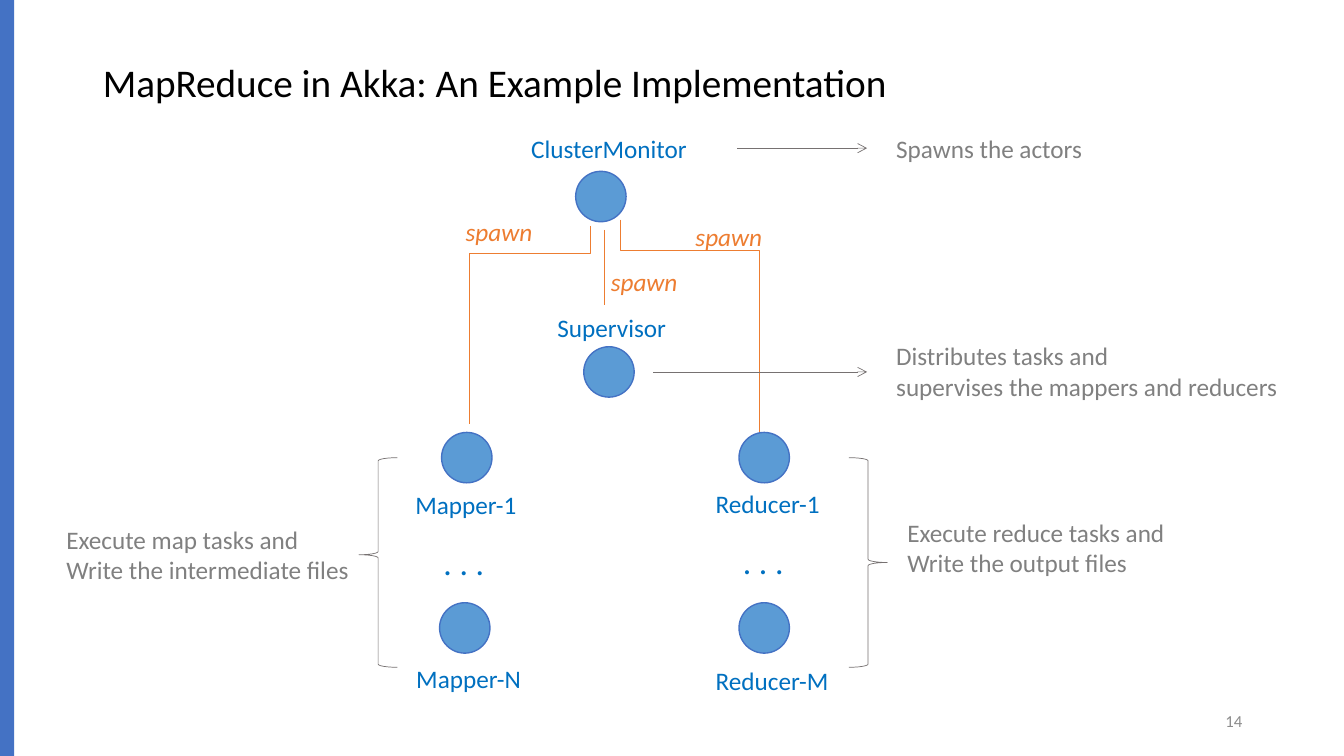
"""Build the slide on the actors of a MapReduce implementation in Akka."""
from dataclasses import dataclass

from lxml.etree import SubElement
from pptx import Presentation
from pptx.dml.color import RGBColor
from pptx.enum.shapes import MSO_CONNECTOR, MSO_SHAPE
from pptx.enum.text import MSO_ANCHOR, MSO_AUTO_SIZE, PP_ALIGN
from pptx.oxml.ns import qn
from pptx.shapes.autoshape import Shape
from pptx.shapes.connector import Connector
from pptx.slide import Slide
from pptx.text.text import TextFrame
from pptx.util import Inches, Pt

COLOURS = {
    "bar": "4472C4",
    "actor": "5B9BD5",
    "title": "000000",
    "name": "0070C0",
    "spawn": "ED7D31",
    "note": "808080",
    "pointer": "767171",
    "number": "8C8C8C",
}
ACTOR_SIZE = 0.5
BRACE_TOP, BRACE_WIDTH, BRACE_HEIGHT = 4.54, 0.38, 2.08


@dataclass(frozen=True)
class Label:
    """A text with its place, size and look."""

    text: str
    left: float
    top: float
    width: float
    height: float = 0.4
    colour: str = "name"
    size: int = 18
    italic: bool = False


@dataclass(frozen=True)
class Line:
    """A line between two points, with an arrowhead or a bend if wanted."""

    start: tuple[float, float]
    end: tuple[float, float]
    colour: str
    arrow: bool = False
    bend: float = 0


@dataclass(frozen=True)
class Brace:
    """A brace around a group of actors."""

    left: float
    rotation: int
    point: float


TITLE = Label("MapReduce in Akka: An Example Implementation",
              0.92, 0.4, 11.5, 0.89, "title", 28)
NUMBER = Label("14", 9.42, 6.95, 3, 0.4, "number", 12)
LABELS = [
    Label("ClusterMonitor", 5.17, 1.27, 1.76),
    Label("Supervisor", 5.43, 3.05, 1.29),
    Label("Mapper-1", 4.02, 4.81, 1.22),
    Label("Mapper-N", 4.03, 6.53, 1.25),
    Label("Reducer-1", 7, 4.8, 1.25),
    Label("Reducer-M", 7, 6.55, 1.33),
    Label(". . .", 4.3, 5.33, 0.76, 0.5, size=24),
    Label(". . .", 7.27, 5.32, 0.76, 0.5, size=24),
    Label("spawn", 4.52, 2.1, 0.87, colour="spawn", italic=True),
    Label("spawn", 6.8, 2.15, 0.87, colour="spawn", italic=True),
    Label("spawn", 5.96, 2.59, 0.87, colour="spawn", italic=True),
    Label("Spawns the actors", 8.79, 1.27, 2.12, colour="note"),
    Label("Distributes tasks and\nsupervises the mappers and reducers",
          8.79, 3.33, 4.03, 0.71, "note"),
    Label("Execute reduce tasks and\nWrite the output files",
          8.9, 5.08, 2.81, 0.71, "note"),
    Label("Execute map tasks and\nWrite the intermediate files",
          0.56, 5.15, 3, 0.71, "note"),
]
ACTORS = [(5.71, 1.7), (5.79, 3.44), (4.38, 4.29), (4.36, 5.98),
          (7.33, 4.29), (7.33, 5.98)]
LINES = [
    Line((5.86, 2.24), (4.66, 4.21), "spawn", bend=0.138),
    Line((5.99, 2.28), (5.99, 3.03), "spawn"),
    Line((6.15, 2.18), (7.53, 4.29), "spawn", bend=0.146),
    Line((7.31, 1.47), (8.6, 1.47), "pointer", arrow=True),
    Line((6.48, 3.69), (8.6, 3.69), "pointer", arrow=True),
]
BRACES = [Brace(3.56, 180, 0.537), Brace(8.42, 0, 0.5)]


def colour_of(name: str) -> RGBColor:
    """Return the named colour."""
    return RGBColor.from_string(COLOURS[name])


def write_text(frame: TextFrame, label: Label) -> None:
    """Write the label, one paragraph a line."""
    frame.text = label.text
    formats = {"name": "Calibri", "size": Pt(label.size),
               "bold": False, "italic": label.italic}
    for para in frame.paragraphs:
        for span in para.runs:
            for key, value in formats.items():
                setattr(span.font, key, value)
            span.font.color.rgb = colour_of(label.colour)


def place_title(page: Slide) -> None:
    """Move and format the title placeholder."""
    box = page.shapes.title
    for side in ("left", "top", "width", "height"):
        setattr(box, side, Inches(getattr(TITLE, side)))
    write_text(box.text_frame, TITLE)
    box.text_frame.vertical_anchor = MSO_ANCHOR.MIDDLE
    for key, value in {"alignment": PP_ALIGN.LEFT, "line_spacing": 0.9}.items():
        setattr(box.text_frame.paragraphs[0], key, value)


def add_label(page: Slide, label: Label) -> TextFrame:
    """Add a text box that fits its text."""
    box = page.shapes.add_textbox(Inches(label.left), Inches(label.top),
                                  Inches(label.width), Inches(label.height))
    write_text(box.text_frame, label)
    for key, value in {"word_wrap": False,
                       "auto_size": MSO_AUTO_SIZE.SHAPE_TO_FIT_TEXT}.items():
        setattr(box.text_frame, key, value)
    return box.text_frame


def add_number(page: Slide) -> None:
    """Add the page number at the right of its box."""
    frame = add_label(page, NUMBER)
    for key, value in {"word_wrap": True, "auto_size": MSO_AUTO_SIZE.NONE,
                       "vertical_anchor": MSO_ANCHOR.MIDDLE}.items():
        setattr(frame, key, value)
    frame.paragraphs[0].alignment = PP_ALIGN.RIGHT


def add_figure(page: Slide, kind: MSO_SHAPE, left: float, top: float,
               width: float, height: float, fill: str = "",
               line: str = "", weight: float = 1) -> Shape:
    """Add a preset shape with the named fill and line colours."""
    shape = page.shapes.add_shape(kind, Inches(left), Inches(top),
                                  Inches(width), Inches(height))
    shape.shadow.inherit = False
    if fill:
        shape.fill.solid()
        shape.fill.fore_color.rgb = colour_of(fill)
    else:
        shape.fill.background()
    if line:
        shape.line.color.rgb = colour_of(line)
        shape.line.width = Pt(weight)
    else:
        shape.line.fill.background()
    return shape


def add_elbow(page: Slide, line: Line) -> Connector:
    """Add a connector that leaves downwards, turned a quarter to either side."""
    (x1, y1), (x2, y2) = line.start, line.end
    side = 1 if x2 < x1 else -1
    middle_x, middle_y = (x1 + x2) / 2, (y1 + y2) / 2
    reach, rise = side * (y2 - y1) / 2, abs(x2 - x1) / 2
    elbow = page.shapes.add_connector(
        MSO_CONNECTOR.ELBOW,
        Inches(middle_x - reach), Inches(middle_y - rise),
        Inches(middle_x + reach), Inches(middle_y + rise))
    properties = elbow._element.spPr
    properties.find(qn("a:xfrm")).set("rot", str(side * 90 % 360 * 60000))
    values = properties.find(qn("a:prstGeom")).get_or_add_avLst()
    SubElement(values, qn("a:gd"), name="adj1",
               fmla=f"val {round(line.bend * 100000)}")
    return elbow


def add_line(page: Slide, line: Line) -> None:
    """Add a straight or bent line."""
    if line.bend:
        connector = add_elbow(page, line)
    else:
        connector = page.shapes.add_connector(
            MSO_CONNECTOR.STRAIGHT, *map(Inches, line.start + line.end))
    connector.line.color.rgb = colour_of(line.colour)
    connector.line.width = Pt(0.5)
    if line.arrow:
        SubElement(connector.line._get_or_add_ln(), qn("a:tailEnd"), type="arrow")
    SubElement(connector._element.spPr, qn("a:effectLst"))


def main() -> None:
    """Draw the slide and save the deck."""
    deck = Presentation()
    deck.slide_width, deck.slide_height = Inches(13.33), Inches(7.5)
    page = deck.slides.add_slide(deck.slide_layouts.get_by_name("Title Only"))
    add_figure(page, MSO_SHAPE.RECTANGLE, 0, 0, 0.14, 7.5, "bar")
    place_title(page)
    add_number(page)
    for left, top in ACTORS:
        add_figure(page, MSO_SHAPE.OVAL, left, top, ACTOR_SIZE, ACTOR_SIZE, "actor", "bar")
    for line in LINES:
        add_line(page, line)
    for brace in BRACES:
        shape = add_figure(page, MSO_SHAPE.RIGHT_BRACE, brace.left, BRACE_TOP,
                           BRACE_WIDTH, BRACE_HEIGHT, line="pointer", weight=0.5)
        shape.rotation = brace.rotation
        shape.adjustments[1] = brace.point
    for label in LABELS:
        add_label(page, label)
    deck.save("out.pptx")


if __name__ == "__main__":
    main()
